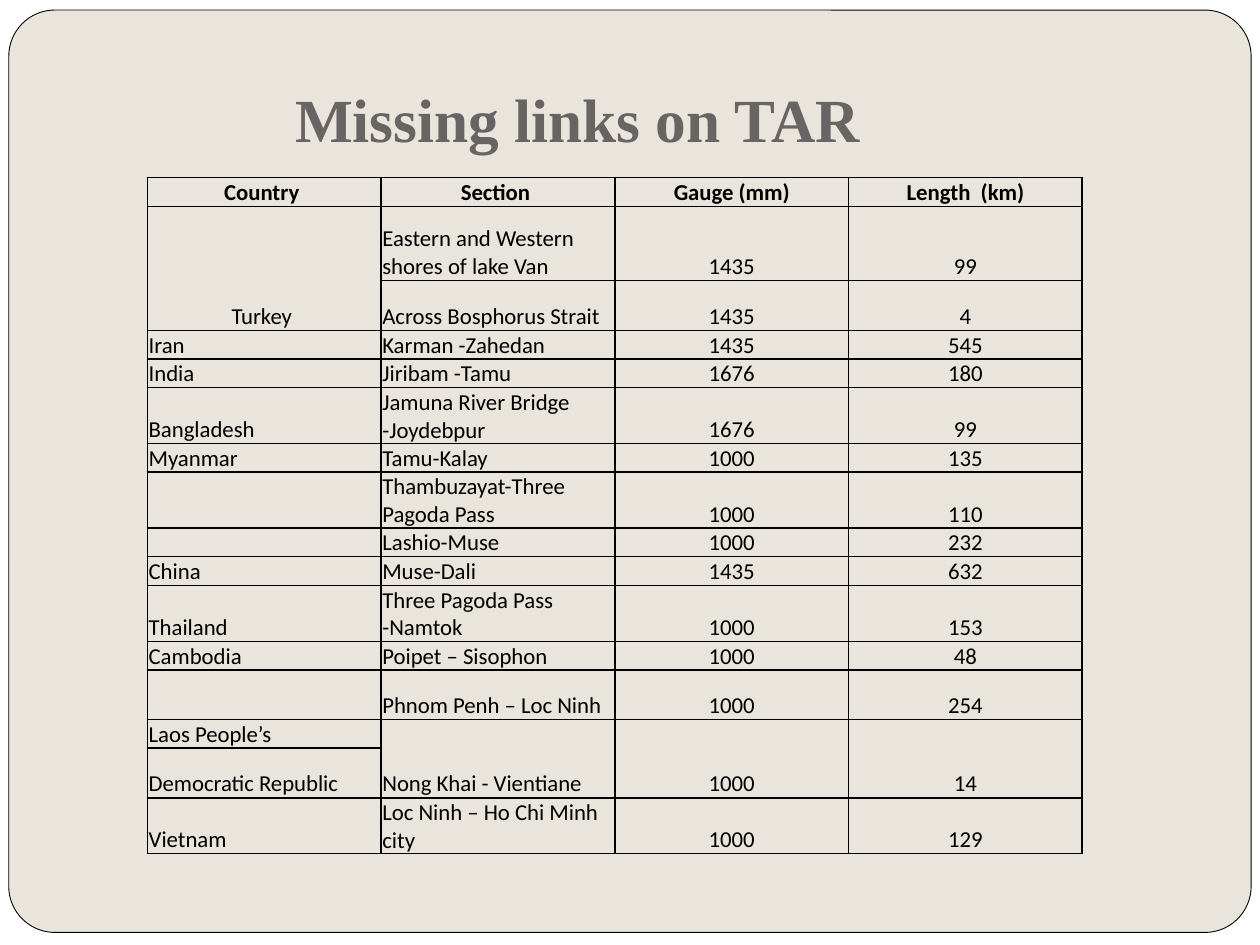
import pptx
import pptx.dml.color
import pptx.enum.shapes
import pptx.enum.text
import pptx.util
from lxml import etree
from pptx.oxml.ns import qn

Inches, Pt = pptx.util.Inches, pptx.util.Pt
ALIGN = pptx.enum.text.PP_ALIGN
BOTTOM = pptx.enum.text.MSO_ANCHOR.BOTTOM
BLACK = pptx.dml.color.RGBColor(0x00, 0x00, 0x00)
WHITE = pptx.dml.color.RGBColor(0xFF, 0xFF, 0xFF)
SAND = pptx.dml.color.RGBColor(0xE9, 0xE5, 0xDC)
GREY = pptx.dml.color.RGBColor(0x69, 0x64, 0x64)

TITLE = "Missing links on TAR"
HEADER = ("Country ", "Section ", "Gauge (mm)", "Length  (km)")
LINKS = [
    ("Turkey ", "Eastern and Western shores of lake Van", "1435", "99"),
    ("", "Across Bosphorus Strait", "1435", "4"),
    ("Iran", "Karman -Zahedan", "1435", "545"),
    ("India", "Jiribam -Tamu", "1676", "180"),
    ("Bangladesh", "Jamuna River Bridge -Joydebpur", "1676", "99"),
    ("Myanmar", "Tamu-Kalay", "1000", "135"),
    ("", "Thambuzayat-Three Pagoda Pass", "1000", "110"),
    ("", "Lashio-Muse", "1000", "232"),
    ("China", "Muse-Dali", "1435", "632"),
    ("Thailand", "Three Pagoda Pass -Namtok", "1000", "153"),
    ("Cambodia", "Poipet – Sisophon", "1000", "48"),
    ("", "Phnom Penh – Loc Ninh", "1000", "254"),
    ("Laos People’s", "Nong Khai - Vientiane", "1000", "14"),
    ("Democratic Republic", "", "", ""),
    ("Vietnam", "Loc Ninh – Ho Chi Minh city", "1000", "129"),
]
ROW_UNIT = 0.197
ROW_UNITS = [1, 3, 2, 1, 1, 2, 1, 2, 1, 1, 2, 1, 2, 1, 2, 2]
# top row and column of each pair of cells merged downwards
MERGES = [(1, 0), (13, 1), (13, 2), (13, 3)]

TITLE_FONT = {"name": "Times New Roman", "size": Pt(35), "bold": True}
CELL_FONT = {"name": "Calibri", "size": Pt(13)}
CELL_FORMAT = {"margin_left": Inches(0.01), "margin_right": Inches(0.01),
               "margin_top": Inches(0.01), "margin_bottom": 0,
               "vertical_anchor": BOTTOM}
TITLE_FORMAT = {"margin_left": Inches(0.1), "margin_right": Inches(0.1),
                "margin_top": Inches(0.05), "margin_bottom": Inches(0.1),
                "vertical_anchor": BOTTOM, "word_wrap": True}


def apply(target, values):
    for name, value in values.items():
        setattr(target, name, value)


def add_panel(page, kind, left, top, width, height, color):
    panel = page.shapes.add_shape(kind, left, top, width, height)
    panel.shadow.inherit = False
    panel.fill.solid()
    panel.fill.fore_color.rgb = color
    panel.line.fill.background()
    return panel


def write(para, text, font, color, align):
    para.alignment = align
    if text:
        span = para.add_run()
        span.text = text
        apply(span.font, font)
        span.font.color.rgb = color


def add_borders(cell):
    """Draw thin black lines on all four sides of a cell."""
    props = cell._tc.get_or_add_tcPr()
    for place, side in enumerate(("lnL", "lnR", "lnT", "lnB")):
        line = etree.Element(qn(f"a:{side}"), w=str(Pt(1)))
        fill = etree.SubElement(line, qn("a:solidFill"))
        etree.SubElement(fill, qn("a:srgbClr"), val=str(BLACK))
        props.insert(place, line)


def add_link_table(page):
    rows = [HEADER] + LINKS
    heights = [Inches(units * ROW_UNIT) for units in ROW_UNITS]
    frame = page.shapes.add_table(len(rows), len(HEADER), Inches(1.17),
                                  Inches(1.41), Inches(7.42), sum(heights))
    table = frame.table
    for row, height in zip(table.rows, heights):
        row.height = height
    for row, texts in enumerate(rows):
        for column, text in enumerate(texts):
            cell = table.cell(row, column)
            cell.fill.background()
            apply(cell, CELL_FORMAT)
            add_borders(cell)
            centred = row == 0 or column > 1 or text == "Turkey "
            para = cell.text_frame.paragraphs[0]
            write(para, text, {**CELL_FONT, "bold": row == 0}, BLACK,
                  ALIGN.CENTER if centred else ALIGN.LEFT)
            if not text:  # keeps empty cells from stretching their row
                etree.SubElement(para._p, qn("a:endParaRPr"), sz="1300")
    for row, column in MERGES:
        table.cell(row, column).merge(table.cell(row + 1, column))


def main():
    deck = pptx.Presentation()
    deck.slide_width, deck.slide_height = Inches(10), Inches(7.5)
    page = deck.slides.add_slide(deck.slide_layouts[6])
    page.background.fill.solid()
    page.background.fill.fore_color.rgb = SAND

    kinds = pptx.enum.shapes.MSO_SHAPE
    add_panel(page, kinds.RECTANGLE, 0, 0, deck.slide_width,
              deck.slide_height, WHITE)
    card = add_panel(page, kinds.ROUNDED_RECTANGLE, Inches(0.07), Inches(0.08),
                     Inches(9.86), Inches(7.32), SAND)
    card.adjustments[0] = 0.05
    card.line.color.rgb = BLACK
    card.line.width = Pt(0.5)

    box = page.shapes.add_textbox(Inches(0.5), Inches(0.55), Inches(8.17),
                                  Inches(0.78))
    apply(box.text_frame, TITLE_FORMAT)
    write(box.text_frame.paragraphs[0], TITLE, TITLE_FONT, GREY, ALIGN.CENTER)

    add_link_table(page)
    deck.save("out.pptx")


if __name__ == "__main__":
    main()
